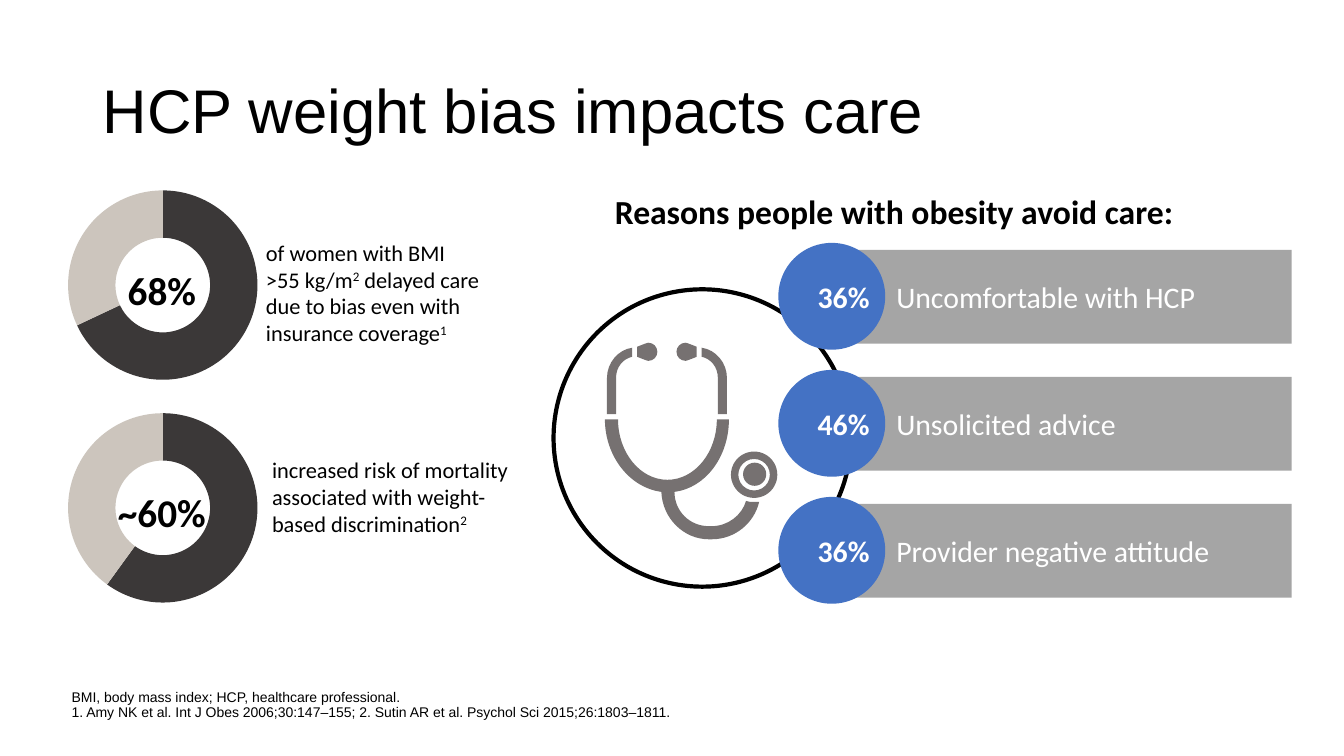
"""Build the slide on how weight bias of healthcare professionals impacts care."""
from copy import deepcopy
from dataclasses import dataclass
from typing import Optional

from lxml.etree import SubElement
from pptx import Presentation
from pptx.chart.data import CategoryChartData
from pptx.dml.color import RGBColor
from pptx.enum.chart import XL_CHART_TYPE
from pptx.enum.shapes import MSO_SHAPE
from pptx.enum.text import MSO_ANCHOR, MSO_AUTO_SIZE, PP_ALIGN
from pptx.oxml.ns import qn
from pptx.util import Inches, Pt

BLACK = RGBColor(0x00, 0x00, 0x00)
WHITE = RGBColor(0xFF, 0xFF, 0xFF)
BLUE = RGBColor(0x44, 0x72, 0xC4)
BAR_GRAY = RGBColor(0xA5, 0xA5, 0xA5)
ICON_GRAY = RGBColor(0x76, 0x71, 0x71)
CHARCOAL = RGBColor(0x3B, 0x38, 0x38)
SAND = RGBColor(0xCC, 0xC5, 0xBD)

MIRROR_SUM = 13.23
Point = tuple[float, float]
Box = tuple[float, float, float, float]


@dataclass(frozen=True)
class Reason:
    share: str
    label: str


@dataclass(frozen=True)
class Finding:
    percent: int
    headline: str
    caption: str
    caption_left: float
    caption_top: float


@dataclass(frozen=True)
class Outline:
    start: Point
    segments: tuple[tuple[Point, ...], ...]
    mirrored: bool = False


REASONS = (
    Reason("36%", "Uncomfortable with HCP"),
    Reason("46%", "Unsolicited advice"),
    Reason("36%", "Provider negative attitude"),
)
FINDINGS = (
    Finding(68, "68%", "of women with BMI\n>55 kg/m^2^ delayed care due to bias "
            "even with insurance coverage^1", 2.54, 2.32),
    Finding(60, "~60%", "increased risk of mortality associated with "
            "weight-based discrimination^2", 2.6, 4.48),
)
EARPIECE = Outline((6.32, 3.54), (
    ((6.37, 3.56), (6.42, 3.58), (6.43, 3.58)),
    ((6.48, 3.58), (6.52, 3.54), (6.52, 3.49)),
    ((6.52, 3.44), (6.48, 3.4), (6.43, 3.4)),
    ((6.42, 3.4), (6.37, 3.42), (6.32, 3.44)),
    ((6.32, 3.54),),
), mirrored=True)
EAR_TUBE = Outline((6.27, 3.45), (
    ((6.13, 3.47), (6.02, 3.6), (6.02, 3.75)),
    ((6.02, 4.11),),
    ((6.11, 4.11),),
    ((6.11, 3.75),),
    ((6.11, 3.64), (6.18, 3.56), (6.27, 3.54)),
    ((6.27, 3.45),),
), mirrored=True)
MAIN_TUBE = Outline((7.48, 4.98), (
    ((7.45, 4.98), (7.42, 4.98), (7.4, 4.97)),
    ((7.36, 5.11), (7.22, 5.22), (7.06, 5.22)),
    ((7.03, 5.22),),
    ((6.84, 5.22), (6.69, 5.07), (6.69, 4.88)),
    ((7, 4.84), (7.23, 4.53), (7.23, 4.16)),
    ((7.11, 4.16),),
    ((7.11, 4.49), (6.89, 4.76), (6.62, 4.76)),
    ((6.35, 4.76), (6.13, 4.49), (6.13, 4.16)),
    ((6, 4.16),),
    ((6, 4.53), (6.25, 4.84), (6.56, 4.88)),
    ((6.57, 5.14), (6.78, 5.35), (7.03, 5.35)),
    ((7.06, 5.35),),
    ((7.29, 5.35), (7.48, 5.19), (7.53, 4.98)),
    ((7.51, 4.98), (7.5, 4.98), (7.48, 4.98)),
))


def write(frame, text: str, *, size: float, font: str = "Calibri",
          color: RGBColor = BLACK, bold: bool = False, align=PP_ALIGN.LEFT,
          anchor=MSO_ANCHOR.TOP, wrap: bool = True, spacing: Optional[float] = None,
          insets: Box = (0.1, 0.05, 0.1, 0.05)) -> None:
    """Write one paragraph; carets enclose superscripts."""
    frame.auto_size = MSO_AUTO_SIZE.NONE
    frame.word_wrap = wrap
    frame.vertical_anchor = anchor
    (frame.margin_left, frame.margin_top,
     frame.margin_right, frame.margin_bottom) = map(Inches, insets)
    paragraph = frame.paragraphs[0]
    paragraph.alignment = align
    paragraph.line_spacing = spacing
    paragraph.space_before = Pt(0)
    for row, line in enumerate(text.split("\n")):
        if row:
            paragraph.add_line_break()
            paragraph._p[-1].append(deepcopy(run._r.rPr))
        for position, part in enumerate(line.split("^")):
            if not part:
                continue
            run = paragraph.add_run()
            run.text = part
            run.font.name, run.font.size, run.font.bold = font, Pt(size), bold
            run.font.color.rgb = color
            run._r.rPr.set("cap", "none")
            if position % 2:
                run._r.rPr.set("baseline", "30000")


def place(shape, box: Box) -> None:
    """Move and size a shape in inches."""
    shape.left, shape.top, shape.width, shape.height = map(Inches, box)


def paint(shape, fill: RGBColor) -> None:
    """Give a shape a plain fill without line or shadow."""
    shape.shadow.inherit = False
    shape.fill.solid()
    shape.fill.fore_color.rgb = fill
    shape.line.fill.background()


def add_block(slide, kind: MSO_SHAPE, box: Box, fill: RGBColor):
    """Add a filled preset shape."""
    block = slide.shapes.add_shape(kind, *map(Inches, box))
    paint(block, fill)
    return block


def add_label(slide, box: Box, text: str, **style) -> None:
    """Add a text box."""
    write(slide.shapes.add_textbox(*map(Inches, box)).text_frame, text, **style)


def add_outline(slide, outline: Outline, mirror: bool = False) -> None:
    """Add one closed part of the stethoscope, with true cubic curves."""
    points = [outline.start, *(p for segment in outline.segments for p in segment)]
    corners = [(Inches(MIRROR_SUM - x if mirror else x), Inches(y)) for x, y in points]
    builder = slide.shapes.build_freeform(*corners[0])
    builder.add_line_segments(corners[1:], close=True)
    part = builder.convert_to_shape()
    paint(part, ICON_GRAY)
    steps = iter(list(part._element.iter(qn("a:lnTo"))))
    for segment in outline.segments:
        first, *others = [next(steps) for _ in segment]
        if others:
            first.tag = qn("a:cubicBezTo")
        for step in others:
            first.append(step[0])
            step.getparent().remove(step)


def add_stethoscope(slide) -> None:
    """Draw the stethoscope icon."""
    for outline in (EARPIECE, MAIN_TUBE, EAR_TUBE):
        add_outline(slide, outline)
        if outline.mirrored:
            add_outline(slide, outline, mirror=True)
    add_block(slide, MSO_SHAPE.OVAL, (7.37, 4.59, 0.23, 0.23), ICON_GRAY)
    rim = add_block(slide, MSO_SHAPE.DONUT, (7.25, 4.48, 0.46, 0.46), ICON_GRAY)
    rim.adjustments[0] = 0.16


def add_reason(slide, reason: Reason, top: float) -> None:
    """Draw a reason bar with its percentage circle."""
    bar = add_block(slide, MSO_SHAPE.RECTANGLE, (8.36, top, 4.45, 0.93), BAR_GRAY)
    write(bar.text_frame, reason.label, size=21.3, color=WHITE,
          anchor=MSO_ANCHOR.MIDDLE, insets=(0.53, 0.05, 0.1, 0.05))
    badge = add_block(slide, MSO_SHAPE.OVAL, (7.72, top - 0.07, 1.06, 1.06), BLUE)
    write(badge.text_frame, reason.share, size=21.3, color=WHITE, bold=True,
          align=PP_ALIGN.RIGHT, anchor=MSO_ANCHOR.MIDDLE, wrap=False,
          insets=(0.1, 0.05, 0, 0.05))


def add_finding(slide, finding: Finding, top: float) -> None:
    """Draw a doughnut chart with its headline."""
    add_block(slide, MSO_SHAPE.OVAL, (0.97, top + 0.39, 1.27, 1.27), WHITE)
    data = CategoryChartData()
    data.categories = ["1", "2"]
    data.add_series("Series 1", (finding.percent, 100 - finding.percent))
    chart = slide.shapes.add_chart(
        XL_CHART_TYPE.DOUGHNUT, *map(Inches, (-0.02, top, 3.27, 2.16)), data).chart
    chart.has_legend = chart.has_title = False
    chart.font.name, chart.font.size, chart.font.color.rgb = "Calibri", Pt(10), BLACK
    plot = chart.plots[0]
    plot.vary_by_categories = True
    for index, color in enumerate((CHARCOAL, SAND)):
        wedge = plot.series[0].points[index].format
        wedge.fill.solid()
        wedge.fill.fore_color.rgb = color
        wedge.line.fill.background()
    area = chart._chartSpace.chart.plotArea
    next(area.iter(qn("c:holeSize"))).set("val", "61")
    for layout in area.findall(qn("c:layout")):
        area.remove(layout)
    layout = SubElement(area, qn("c:layout"))
    area.insert(0, layout)
    manual = SubElement(layout, qn("c:manualLayout"))
    for tag, value in (("layoutTarget", "inner"), ("xMode", "edge"), ("yMode", "edge"),
                       ("x", "0.21"), ("y", "0.06"), ("w", "0.58"), ("h", "0.87")):
        SubElement(manual, qn(f"c:{tag}")).set("val", value)
    add_label(slide, (0.97, top + 0.83, 1.27, 0.57), finding.headline, size=28,
              bold=True, align=PP_ALIGN.CENTER)


def main() -> None:
    """Build and save the slide."""
    deck = Presentation()
    deck.slide_width, deck.slide_height = Inches(13.33), Inches(7.5)
    slide = deck.slides.add_slide(deck.slide_layouts[2])
    title, references = slide.placeholders
    place(title, (0.92, 0.4, 11.5, 1.45))
    write(title.text_frame, "HCP weight bias impacts care", size=44, font="Arial",
          anchor=MSO_ANCHOR.MIDDLE, spacing=0.9)
    place(references, (0.71, 6.8, 11.71, 0.35))
    write(references.text_frame, "BMI, body mass index; HCP, healthcare professional.\n"
          "1. Amy NK et al. Int J Obes 2006;30:147–155; "
          "2. Sutin AR et al. Psychol Sci 2015;26:1803–1811.",
          size=10, font="Arial", anchor=MSO_ANCHOR.BOTTOM, spacing=0.9, insets=(0, 0, 0, 0))
    hub = add_block(slide, MSO_SHAPE.OVAL, (5.49, 2.87, 2.95, 2.95), WHITE)
    hub.line.color.rgb, hub.line.width = BLACK, Pt(3)
    add_label(slide, (6, 1.84, 6.7, 0.5), "Reasons people with obesity avoid care:",
              size=24, bold=True)
    for row, reason in enumerate(REASONS):
        add_reason(slide, reason, 2.48 + 1.26 * row)
    add_stethoscope(slide)
    for row, finding in enumerate(FINDINGS):
        add_finding(slide, finding, 1.76 + 2.21 * row)
    for finding in FINDINGS:
        add_label(slide, (finding.caption_left, finding.caption_top, 2.6, 1.18),
                  finding.caption, size=16)
    deck.save("out.pptx")


if __name__ == "__main__":
    main()
